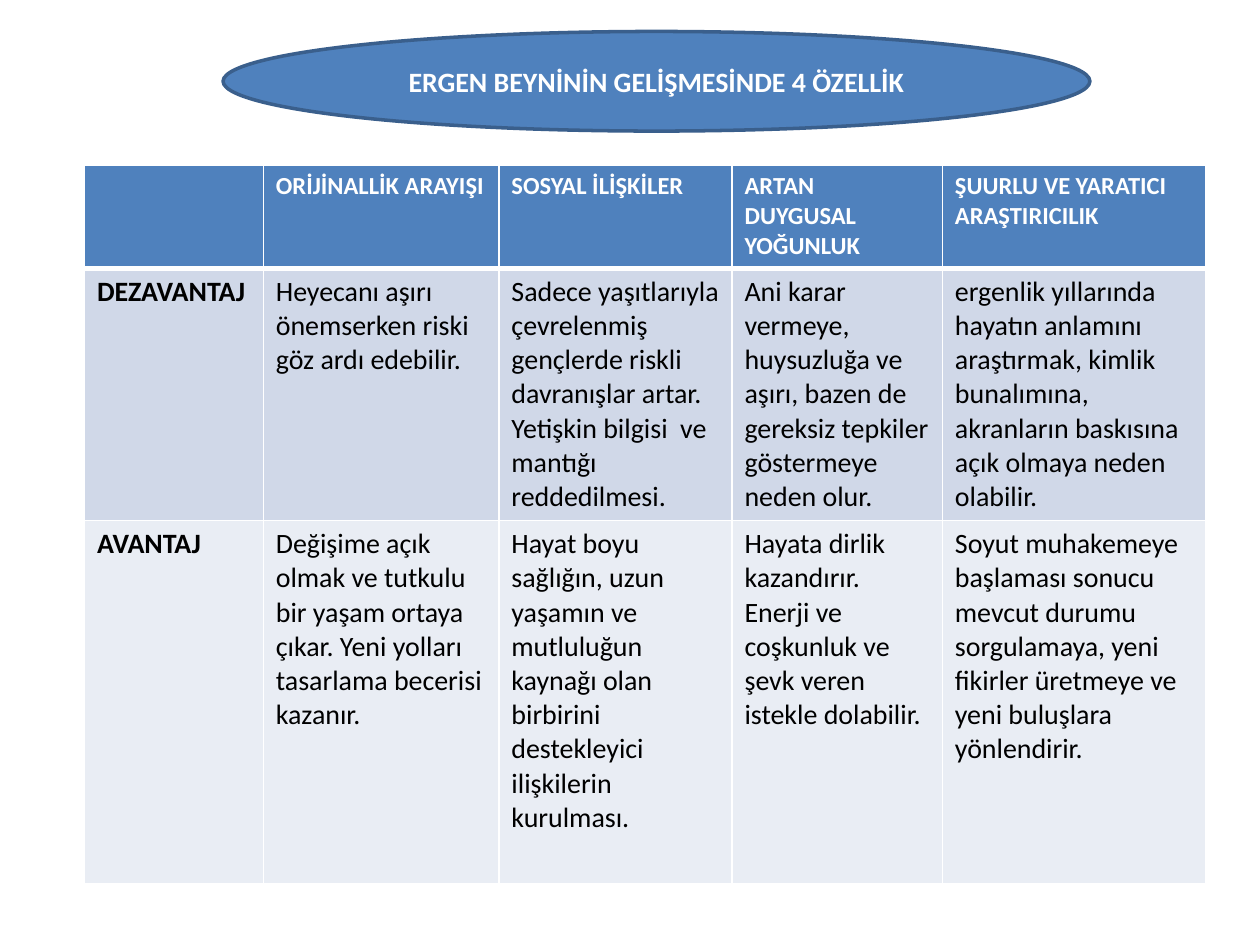
import pptx
import pptx.dml.color
import pptx.enum.shapes
import pptx.enum.text
import pptx.oxml
import pptx.oxml.ns
import pptx.util

FONT = "Calibri"
BLUE, WHITE, BLACK = "4F81BD", "FFFFFF", "000000"
TITLE = "ERGEN BEYNİNİN GELİŞMESİNDE 4 ÖZELLİK"
TITLE_BOX = (1.77, 0.25, 6.88, 0.79)
TABLE_BOX = (0.67, 1.31, 8.9, 5.66)
COLUMN_WEIGHTS = (1.42, 1.87, 1.85, 1.67, 2.09)
ROW_WEIGHTS = (0.82, 1.96, 2.88)
ROW_FILLS = (BLUE, "D0D8E8", "E9EDF4")
TRAITS = (
    (
        "",
        "ORİJİNALLİK ARAYIŞI",
        "SOSYAL İLİŞKİLER",
        "ARTAN DUYGUSAL YOĞUNLUK",
        "ŞUURLU VE YARATICI ARAŞTIRICILIK",
    ),
    (
        "DEZAVANTAJ",
        "Heyecanı aşırı önemserken riski göz ardı edebilir.",
        "Sadece yaşıtlarıyla çevrelenmiş gençlerde riskli davranışlar artar. "
        "Yetişkin bilgisi  ve mantığı reddedilmesi.",
        "Ani karar vermeye, huysuzluğa ve aşırı, bazen de gereksiz tepkiler "
        "göstermeye neden olur.",
        "ergenlik yıllarında hayatın anlamını araştırmak, kimlik bunalımına, "
        "akranların baskısına açık olmaya neden olabilir.",
    ),
    (
        "AVANTAJ",
        "Değişime açık olmak ve tutkulu bir yaşam ortaya çıkar. "
        "Yeni yolları tasarlama becerisi kazanır.",
        "Hayat boyu sağlığın, uzun yaşamın ve mutluluğun kaynağı olan birbirini "
        "destekleyici ilişkilerin kurulması.",
        "Hayata dirlik kazandırır. Enerji ve coşkunluk ve şevk veren istekle dolabilir.",
        "Soyut muhakemeye başlaması sonucu mevcut durumu sorgulamaya, "
        "yeni fikirler üretmeye ve yeni buluşlara yönlendirir.",
    ),
)


def color(value):
    """Turn a hex string into a colour."""
    return pptx.dml.color.RGBColor.from_string(value)


def inches(box):
    """Convert a box given in inches to lengths."""
    return [pptx.util.Inches(length) for length in box]


def add_text(paragraph, text, size, text_color, bold):
    """Add one formatted run to a paragraph."""
    run = paragraph.add_run()
    run.text = text
    run.font.name = FONT
    run.font.size = pptx.util.Pt(size)
    run.font.bold = bold
    run.font.color.rgb = color(text_color)


def set_borders(cell, widths):
    """Draw white cell borders from a mapping of side to width in points."""
    properties = cell._tc.get_or_add_tcPr()
    for index, (side, width) in enumerate(widths.items()):
        border = pptx.oxml.parse_xml(
            f'<a:{side} {pptx.oxml.ns.nsdecls("a")} w="{pptx.util.Pt(width)}">'
            f'<a:solidFill><a:srgbClr val="{WHITE}"/></a:solidFill></a:{side}>'
        )
        properties.insert(index, border)


def add_title(slide, box):
    """Place the title on an ellipse that fills the box."""
    left, top, width, height = inches(box)
    ellipse = slide.shapes.add_shape(
        pptx.enum.shapes.MSO_SHAPE.OVAL, left, top, width, height
    )
    ellipse.shadow.inherit = False
    ellipse.fill.solid()
    ellipse.fill.fore_color.rgb = color(BLUE)
    ellipse.line.color.rgb = color("3A5F8C")
    ellipse.line.width = pptx.util.Pt(2)

    title = slide.shapes.title
    title.left, title.top, title.width, title.height = left, top, width, height
    slide.shapes._spTree.append(title._element)
    frame = title.text_frame
    frame.word_wrap = True
    frame.auto_size = pptx.enum.text.MSO_AUTO_SIZE.NONE
    frame.vertical_anchor = pptx.enum.text.MSO_ANCHOR.MIDDLE
    paragraph = frame.paragraphs[0]
    paragraph.alignment = pptx.enum.text.PP_ALIGN.CENTER
    add_text(paragraph, TITLE, 16, WHITE, True)


def add_trait_table(slide, box):
    """Fill the box with the table of traits, drawbacks and benefits."""
    left, top, width, height = inches(box)
    table = slide.shapes.add_table(
        len(ROW_WEIGHTS), len(COLUMN_WEIGHTS), left, top, width, height
    ).table
    for column, weight in zip(table.columns, COLUMN_WEIGHTS):
        column.width = int(width * weight / sum(COLUMN_WEIGHTS))
    for row, weight in zip(table.rows, ROW_WEIGHTS):
        row.height = int(height * weight / sum(ROW_WEIGHTS))
    for row_index, texts in enumerate(TRAITS):
        header = row_index == 0
        for column_index, text in enumerate(texts):
            cell = table.cell(row_index, column_index)
            cell.fill.solid()
            cell.fill.fore_color.rgb = color(ROW_FILLS[row_index])
            set_borders(cell, {
                "lnL": 1,
                "lnR": 1,
                "lnT": 3 if row_index == 1 else 1,
                "lnB": 3 if header else 1,
            })
            if text:
                add_text(
                    cell.text_frame.paragraphs[0],
                    text,
                    14 if header else 16,
                    WHITE if header else BLACK,
                    header or column_index == 0,
                )


def main():
    """Build and save the presentation."""
    presentation = pptx.Presentation()
    presentation.slide_width = pptx.util.Inches(10)
    presentation.slide_height = pptx.util.Inches(7.5)
    slide = presentation.slides.add_slide(presentation.slide_layouts[5])
    add_title(slide, TITLE_BOX)
    add_trait_table(slide, TABLE_BOX)
    presentation.save("out.pptx")


if __name__ == "__main__":
    main()
